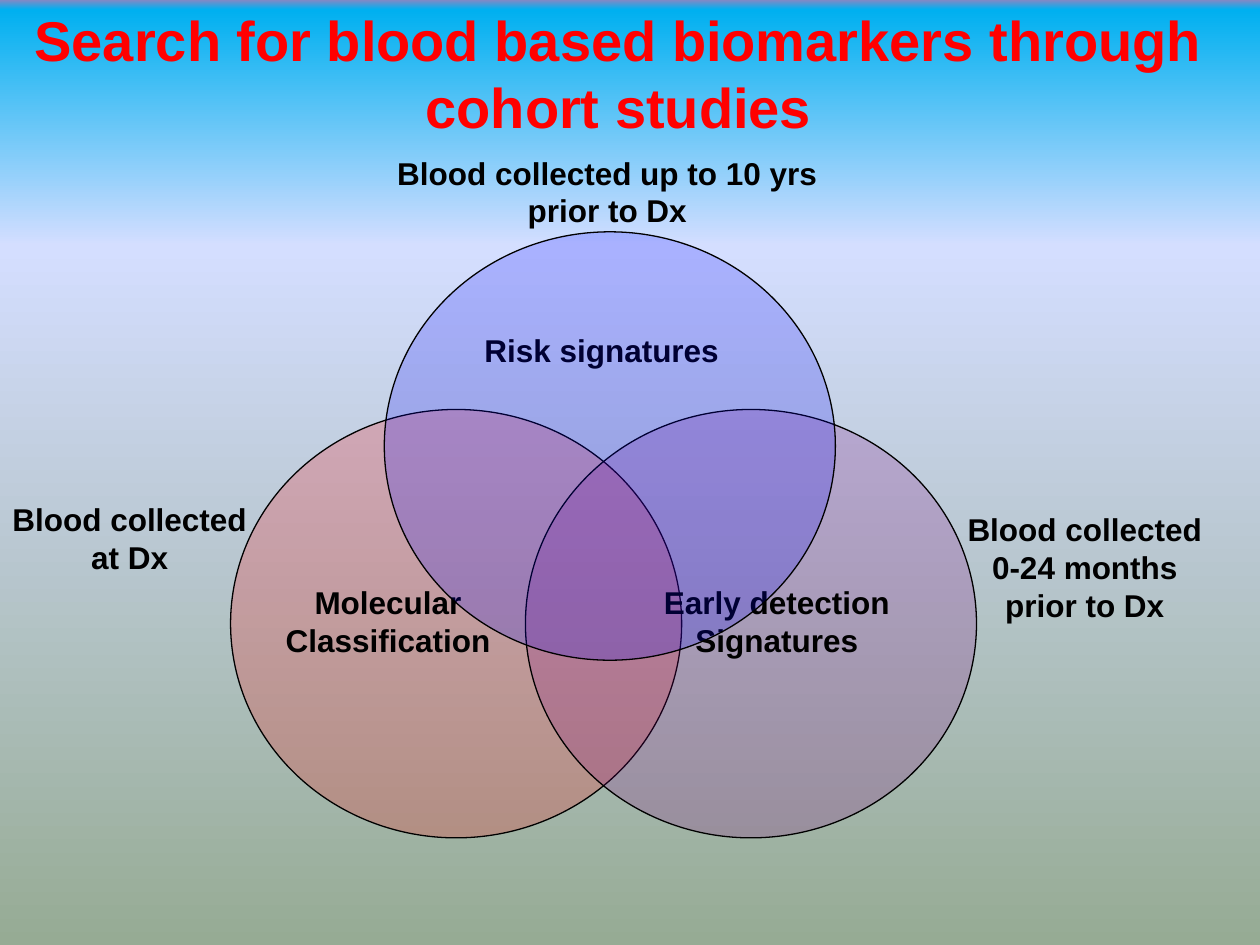
import pptx
import pptx.util
import pptx.dml.color
import pptx.enum.shapes
import pptx.enum.text
import pptx.oxml
from pptx.util import Inches
from dataclasses import dataclass


@dataclass(frozen=True)
class Theme:
    font: str = "Arial"
    title_size: int = 32
    label_size: int = 18
    title: str = "FF0000"
    ink: str = "000000"
    molecular: str = "FF0000"
    detection: str = "800080"
    risk: str = "0000FF"
    circle_opacity: int = 20
    background: tuple = ((0, "8488C4"), (1, "00B0F0"), (26, "D4DEFF"), (100, "96AB94"))


def color(value):
    return pptx.dml.color.RGBColor.from_string(value)


def write_text(frame, text, *, font, size, fill, bold=True, wrap=False):
    frame.word_wrap = wrap
    frame.auto_size = pptx.enum.text.MSO_AUTO_SIZE.NONE
    frame.vertical_anchor = pptx.enum.text.MSO_ANCHOR.TOP
    frame.text = text
    for paragraph in frame.paragraphs:
        paragraph.alignment = pptx.enum.text.PP_ALIGN.CENTER
        for run in paragraph.runs:
            run.font.name = font
            run.font.size = pptx.util.Pt(size)
            run.font.bold = bold
            run.font.color.rgb = color(fill)


class VennSlide:
    def __init__(self, presentation, theme):
        self.theme = theme
        self.slide = presentation.slides.add_slide(presentation.slide_layouts[5])

    def background(self):
        fill = self.slide.background.fill
        fill.gradient()
        gradient = self.slide.background._cSld.bg.bgPr.find(pptx.oxml.ns.qn("a:gradFill"))
        stops = "".join(
            f'<a:gs pos="{position * 1000}"><a:srgbClr val="{value}"/></a:gs>'
            for position, value in self.theme.background
        )
        replacement = pptx.oxml.parse_xml(
            f'<a:gradFill {pptx.oxml.ns.nsdecls("a")} rotWithShape="1">'
            f'<a:gsLst>{stops}</a:gsLst><a:lin ang="5400000" scaled="0"/></a:gradFill>'
        )
        gradient.getparent().replace(gradient, replacement)

    def title(self, text, left, top, width, height):
        shape = self.slide.shapes.title
        shape.left, shape.top = Inches(left), Inches(top)
        shape.width, shape.height = Inches(width), Inches(height)
        write_text(shape.text_frame, text, font=self.theme.font,
                   size=self.theme.title_size, fill=self.theme.title, wrap=True)

    def circle(self, fill, left, top, width=3.58, height=3.4):
        shape = self.slide.shapes.add_shape(
            pptx.enum.shapes.MSO_SHAPE.OVAL,
            Inches(left), Inches(top), Inches(width), Inches(height))
        shape.shadow.inherit = False
        shape.fill.solid()
        shape.fill.fore_color.rgb = color(fill)
        solid = shape._element.spPr.find(pptx.oxml.ns.qn("a:solidFill"))
        solid[0].append(pptx.oxml.parse_xml(
            f'<a:alpha {pptx.oxml.ns.nsdecls("a")} val="{self.theme.circle_opacity * 1000}"/>'))
        shape.line.color.rgb = color(self.theme.ink)
        shape.line.width = pptx.util.Pt(0.75)

    def label(self, text, left, top, width, height=0.7):
        shape = self.slide.shapes.add_textbox(
            Inches(left), Inches(top), Inches(width), Inches(height))
        write_text(shape.text_frame, text, font=self.theme.font,
                   size=self.theme.label_size, fill=self.theme.ink)


def main():
    presentation = pptx.Presentation()
    presentation.slide_width = Inches(10)
    presentation.slide_height = Inches(7.5)
    theme = Theme()
    venn = VennSlide(presentation, theme)
    venn.background()
    venn.title("Search for blood based biomarkers through cohort studies",
               0.17, -0.01, 9.48, 1.18)
    venn.circle(theme.molecular, 1.83, 3.25)
    venn.circle(theme.detection, 4.17, 3.25)
    venn.label("Molecular\nClassification", 2.08, 4.58, 2)
    venn.label("Early detection\nSignatures", 5.17, 4.58, 1.99)
    venn.label("Risk signatures", 3.7, 2.58, 2.15)
    venn.circle(theme.risk, 3.05, 1.84)
    venn.label("Blood collected up to 10 yrs\nprior to Dx", 3, 1.17, 3.64)
    venn.label("Blood collected\n0-24 months\nprior to Dx", 7.58, 4, 2.06, 1)
    venn.label("Blood collected\nat Dx", 0, 3.92, 2.06)
    presentation.save("out.pptx")


if __name__ == "__main__":
    main()
